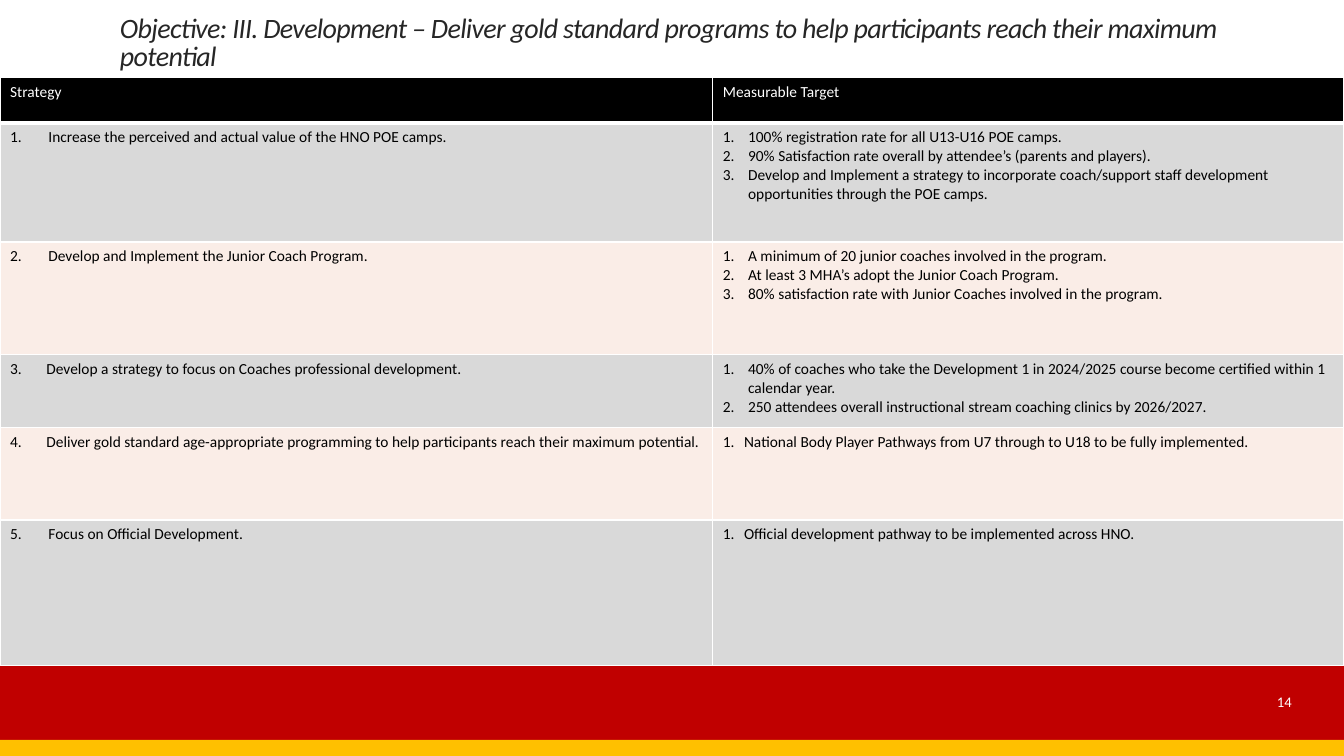
import pptx
import pptx.util
import pptx.dml.color
import pptx.enum.shapes
import pptx.enum.text
import pptx.oxml
import pptx.oxml.ns
from dataclasses import dataclass
from pptx.util import Inches


@dataclass(frozen=True)
class Theme:
    """Hold the colours, font and type sizes of the slide."""
    font: str = "Calibri"
    title_size: float = 20
    table_size: float = 11
    number_size: float = 10.5
    title_ink: str = "262626"
    ink: str = "000000"
    white: str = "FFFFFF"
    header: str = "000000"
    bands: tuple = ("D9D9D9", "FAEDE7")
    red: str = "C00000"
    gold: str = "FFC000"


THEME = Theme()
TITLE = ("Objective: III. Development – Deliver gold standard programs "
         "to help participants reach their maximum potential")
HEADINGS = ("Strategy", "Measurable Target")
COLUMN_WIDTHS = (7.07, 6.26)
HEADER_HEIGHT = 0.45
OBJECTIVES = [
    (1.18, "Increase the perceived and actual value of the HNO POE camps.", 0.38,
     ["100% registration rate for all U13-U16 POE camps.",
      "90% Satisfaction rate overall by attendee’s (parents and players).",
      "Develop and Implement a strategy to incorporate coach/support staff "
      "development opportunities through the POE camps."], 0.25),
    (1.12, "Develop and Implement the Junior Coach Program.", 0.38,
     ["A minimum of 20 junior coaches involved in the program.",
      "At least 3 MHA’s adopt the Junior Coach Program.",
      "80% satisfaction rate with Junior Coaches involved in the program."], 0.25),
    (0.72, "Develop a strategy to focus on Coaches professional development.", 0.36,
     ["40% of coaches who take the Development 1 in 2024/2025 course become "
      "certified within 1 calendar year.",
      "250 attendees overall instructional stream coaching clinics by 2026/2027."], 0.25),
    (0.92, "Deliver gold standard age-appropriate programming to help "
     "participants reach their maximum potential.", 0.36,
     ["National Body Player Pathways from U7 through to U18 to be fully implemented."], 0.21),
    (1.44, "Focus on Official Development.", 0.38,
     ["Official development pathway to be implemented across HNO."], 0.21),
]


def rgb(code):
    """Turn a hex code into a colour."""
    return pptx.dml.color.RGBColor.from_string(code)


def apply(target, values):
    """Set each named attribute on the target."""
    for name, value in values.items():
        setattr(target, name, value)


def write(paragraph, text, size, color, italic=False):
    """Add one formatted run to a paragraph and return it."""
    run = paragraph.add_run()
    run.text = text
    apply(run.font, {"name": THEME.font, "size": pptx.util.Pt(size),
                     "bold": False, "italic": italic})
    run.font.color.rgb = rgb(color)
    return run


def add_band(slide, top, height, color):
    """Draw one full-width footer band."""
    band = slide.shapes.add_shape(pptx.enum.shapes.MSO_SHAPE.RECTANGLE, 0,
                                  Inches(top), Inches(13.33), Inches(height))
    band.shadow.inherit = False
    band.fill.solid()
    band.fill.fore_color.rgb = rgb(color)
    band.line.fill.background()


def add_title(slide):
    """Place and format the title placeholder."""
    title = slide.shapes.title
    apply(title, {"left": Inches(1.09), "top": Inches(0),
                  "width": Inches(11.21), "height": Inches(0.77)})
    apply(title.text_frame, {"word_wrap": True,
                             "auto_size": pptx.enum.text.MSO_AUTO_SIZE.NONE,
                             "vertical_anchor": pptx.enum.text.MSO_ANCHOR.BOTTOM})
    paragraph = title.text_frame.paragraphs[0]
    apply(paragraph, {"alignment": pptx.enum.text.PP_ALIGN.LEFT, "line_spacing": 0.85})
    run = write(paragraph, TITLE, THEME.title_size, THEME.title_ink, italic=True)
    run.font._element.set("spc", "-50")


def add_page_number(slide, number):
    """Write the page number on the red band."""
    page = slide.shapes.add_textbox(Inches(11.48), Inches(6.76), Inches(1.43), Inches(0.4))
    apply(page.text_frame, {"word_wrap": True,
                            "vertical_anchor": pptx.enum.text.MSO_ANCHOR.MIDDLE})
    paragraph = page.text_frame.paragraphs[0]
    paragraph.alignment = pptx.enum.text.PP_ALIGN.RIGHT
    write(paragraph, number, THEME.number_size, THEME.white)


def style_cell(cell, color, bottom=1, top=1):
    """Fill a cell and give it white borders."""
    cell.fill.solid()
    cell.fill.fore_color.rgb = rgb(color)
    properties = cell._tc.get_or_add_tcPr()
    sides = {"lnL": 1, "lnR": 1, "lnT": top, "lnB": bottom}
    for position, (side, points) in enumerate(sides.items()):
        border = pptx.oxml.parse_xml(
            f'<a:{side} {pptx.oxml.ns.nsdecls("a")} w="{pptx.util.Pt(points)}">'
            f'<a:solidFill><a:srgbClr val="{THEME.white}"/></a:solidFill></a:{side}>')
        properties.insert(position, border)


def write_numbered(cell, items, indent, start=1):
    """Write items as an automatically numbered list."""
    for index, item in enumerate(items):
        frame = cell.text_frame
        paragraph = frame.add_paragraph() if index else frame.paragraphs[0]
        properties = paragraph._p.get_or_add_pPr()
        properties.set("marL", str(Inches(indent)))
        properties.set("indent", str(-Inches(indent)))
        properties.append(pptx.oxml.parse_xml(
            f'<a:buFont {pptx.oxml.ns.nsdecls("a")} typeface="+mj-lt"/>'))
        properties.append(pptx.oxml.parse_xml(
            f'<a:buAutoNum {pptx.oxml.ns.nsdecls("a")} type="arabicPeriod" startAt="{start}"/>'))
        write(paragraph, item, THEME.table_size, THEME.ink)


def add_objectives(slide):
    """Build the table of strategies and measurable targets."""
    heights = [HEADER_HEIGHT] + [objective[0] for objective in OBJECTIVES]
    table = slide.shapes.add_table(len(heights), len(HEADINGS), 0, Inches(0.77),
                                   Inches(sum(COLUMN_WIDTHS)), Inches(sum(heights))).table
    for column, width in zip(table.columns, COLUMN_WIDTHS):
        column.width = Inches(width)
    for row, height in zip(table.rows, heights):
        row.height = Inches(height)
    for column, heading in enumerate(HEADINGS):
        cell = table.cell(0, column)
        style_cell(cell, THEME.header, bottom=3)
        write(cell.text_frame.paragraphs[0], heading, THEME.table_size, THEME.white)
    for number, objective in enumerate(OBJECTIVES, 1):
        height, strategy, strategy_indent, targets, target_indent = objective
        band = THEME.bands[(number - 1) % 2]
        strategy_cell, target_cell = table.cell(number, 0), table.cell(number, 1)
        for cell in (strategy_cell, target_cell):
            style_cell(cell, band, top=3 if number == 1 else 1)
        write_numbered(strategy_cell, [strategy], strategy_indent, number)
        write_numbered(target_cell, targets, target_indent)


def main():
    """Build the slide and save it."""
    deck = pptx.Presentation()
    apply(deck, {"slide_width": Inches(13.33), "slide_height": Inches(7.5)})
    slide = deck.slides.add_slide(deck.slide_layouts[5])
    add_band(slide, 6.59, 0.75, THEME.red)
    add_band(slide, 7.34, 0.16, THEME.gold)
    add_page_number(slide, "14")
    add_objectives(slide)
    add_title(slide)
    deck.save("out.pptx")


if __name__ == "__main__":
    main()
